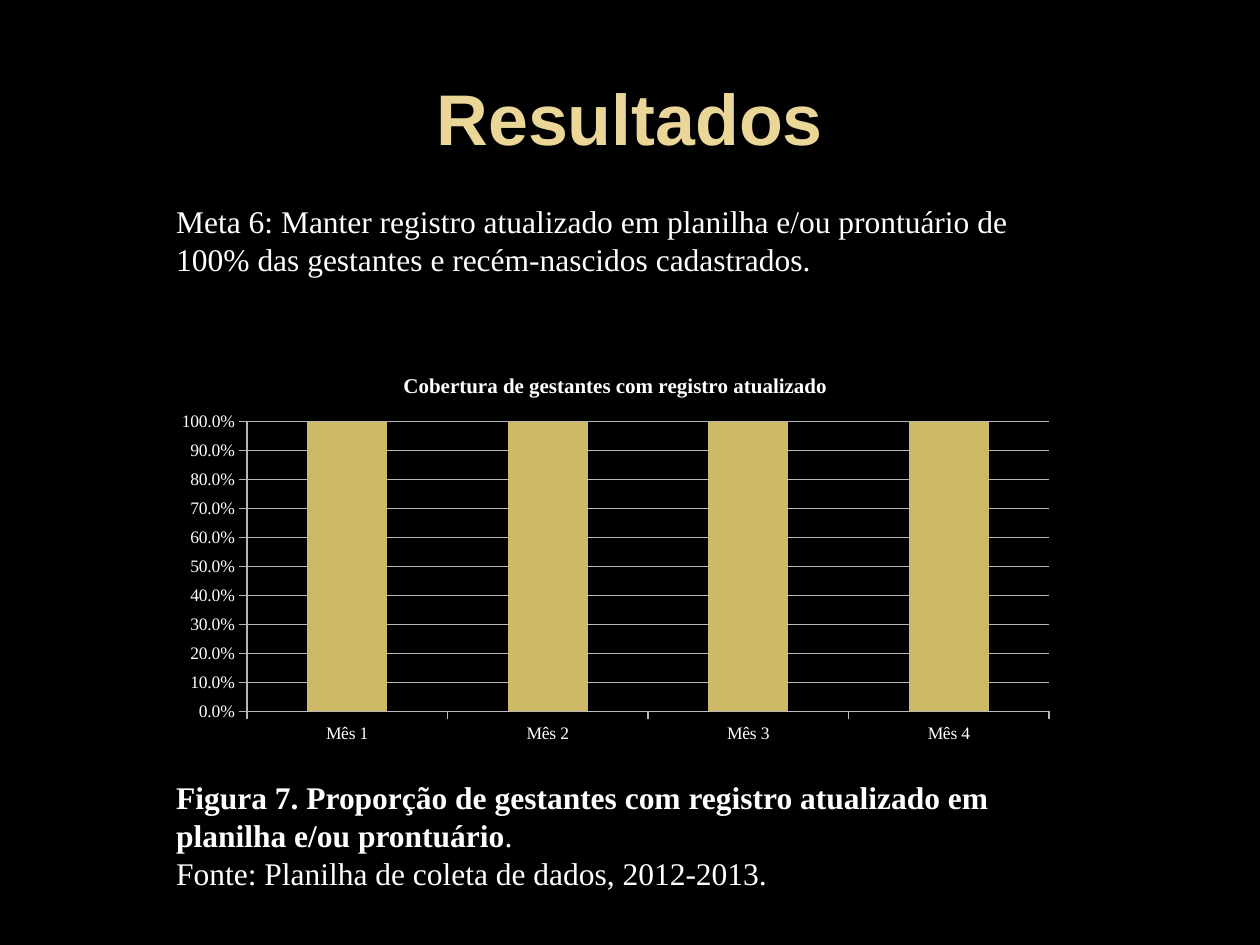
from pptx import Presentation
from pptx.chart.data import CategoryChartData
from pptx.dml.color import RGBColor
from pptx.enum.chart import XL_CHART_TYPE, XL_TICK_MARK
from pptx.enum.text import MSO_ANCHOR, PP_ALIGN
from pptx.util import Inches, Pt

# Content
COLORS = {"bg": "000000", "title": "EAD696", "text": "FFFFFF",
          "bar": "CEB966", "grid": "B8B8B8"}
W, H = 10, 7.5
SERIF = "Times New Roman"
TITLE = {"name": "Arial", "size": 41, "bold": True, "color": "title"}
BODY = {"name": SERIF, "size": 18, "bold": False, "color": "text"}
STRONG = {**BODY, "bold": True}
AXIS = {**BODY, "size": 10}
HEADING = {**STRONG, "size": 12}

# Each text: box as shares of the slide, anchor, alignment, paragraphs of runs
TEXTS = [
    ((0.05, 0.04, 0.9, 0.167), MSO_ANCHOR.MIDDLE, PP_ALIGN.CENTER,
     [[("Resultados", TITLE)]]),
    ((0.13, 0.207, 0.685, 0.095), MSO_ANCHOR.TOP, PP_ALIGN.LEFT,
     [[("Meta 6: Manter registro atualizado em planilha e/ou prontuário de "
        "100% das gestantes e recém-nascidos cadastrados.", BODY)]]),
    ((0.13, 0.817, 0.724, 0.135), MSO_ANCHOR.TOP, PP_ALIGN.LEFT,
     [[("Figura 7. Proporção de gestantes com registro atualizado em "
        "planilha e/ou prontuário", STRONG), (".", BODY)],
      [("Fonte: Planilha de coleta de dados, 2012-2013.", BODY)]]),
]
CHART_BOX = (0.13, 0.375, 0.717, 0.42)
CHART_TITLE = "Cobertura de gestantes com registro atualizado"
COVERAGE = {"Mês 1": 1, "Mês 2": 1, "Mês 3": 1, "Mês 4": 1}


def rgb(key):
    return RGBColor.from_string(COLORS[key])


def place(box):
    return [Inches(share * side) for share, side in zip(box, (W, H, W, H))]


def style(font, fmt):
    for key, value in fmt.items():
        if key == "color":
            font.color.rgb = rgb(value)
        else:
            setattr(font, key, Pt(value) if key == "size" else value)


def add_text(s, box, anchor, align, paragraphs):
    tf = s.shapes.add_textbox(*place(box)).text_frame
    tf.word_wrap, tf.vertical_anchor = True, anchor
    for i, runs in enumerate(paragraphs):
        p = tf.add_paragraph() if i else tf.paragraphs[0]
        p.alignment = align
        for text, fmt in runs:
            r = p.add_run()
            r.text = text
            style(r.font, fmt)


def add_coverage_chart(s):
    data = CategoryChartData(number_format="0.0%")
    data.categories = list(COVERAGE)
    data.add_series(CHART_TITLE, list(COVERAGE.values()))
    chart = s.shapes.add_chart(XL_CHART_TYPE.COLUMN_CLUSTERED,
                               *place(CHART_BOX), data).chart
    style(chart.font, AXIS)
    chart.has_legend = False

    # Chart title
    p = chart.chart_title.text_frame.paragraphs[0]
    r = p.add_run()
    r.text = CHART_TITLE
    style(r.font, HEADING)

    # Columns
    plot = chart.plots[0]
    plot.gap_width, plot.vary_by_categories = 150, False
    fill = plot.series[0].format.fill
    fill.solid()
    fill.fore_color.rgb = rgb("bar")

    # Axes and gridlines
    cat, val = chart.category_axis, chart.value_axis
    val.minimum_scale, val.maximum_scale, val.major_unit = 0, 1, 0.1
    val.has_major_gridlines = True
    val.tick_labels.number_format = "0.0%"
    val.tick_labels.number_format_is_linked = False
    for axis in (cat, val):
        axis.major_tick_mark = XL_TICK_MARK.OUTSIDE
        style(axis.tick_labels.font, AXIS)
    for part in (cat, val, val.major_gridlines):
        part.format.line.color.rgb = rgb("grid")
        part.format.line.width = Pt(0.75)


# Slide
prs = Presentation()
prs.slide_width, prs.slide_height = Inches(W), Inches(H)
s = prs.slides.add_slide(prs.slide_layouts[6])
s.background.fill.solid()
s.background.fill.fore_color.rgb = rgb("bg")
for item in TEXTS:
    add_text(s, *item)
add_coverage_chart(s)
prs.save("out.pptx")
